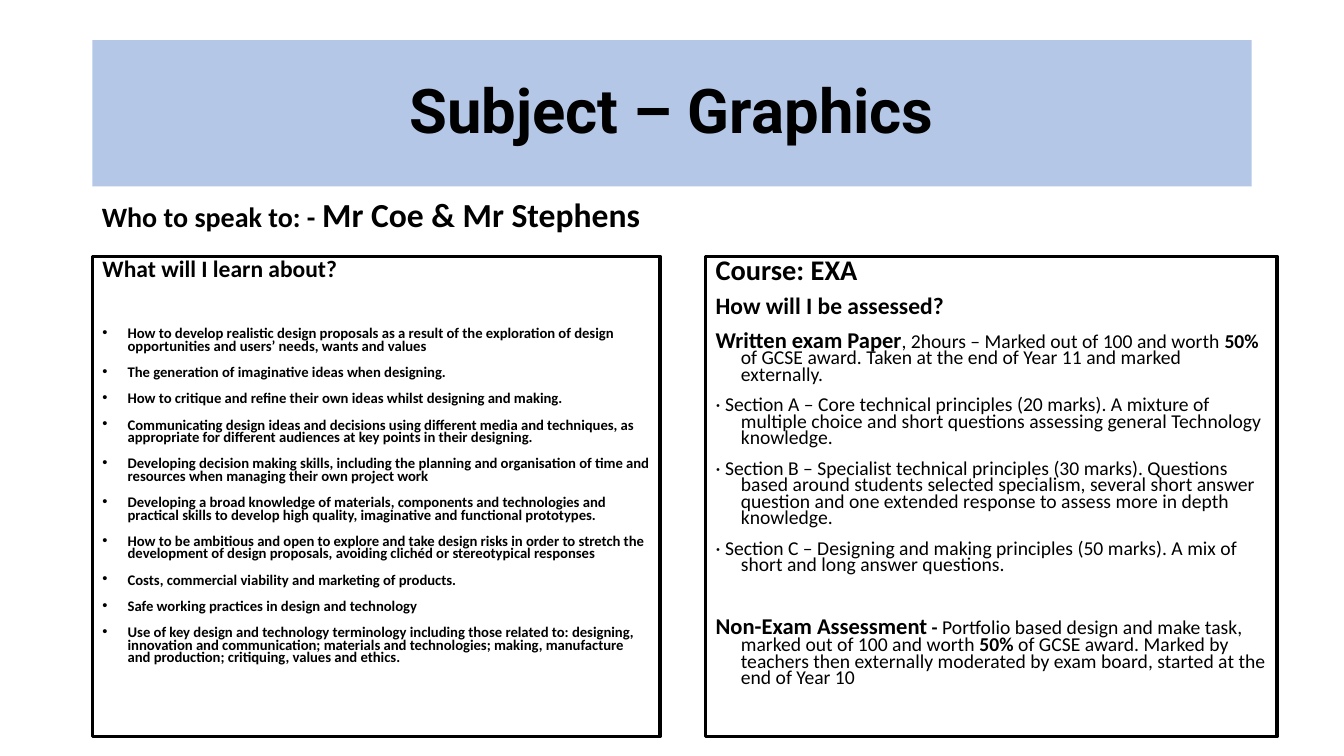
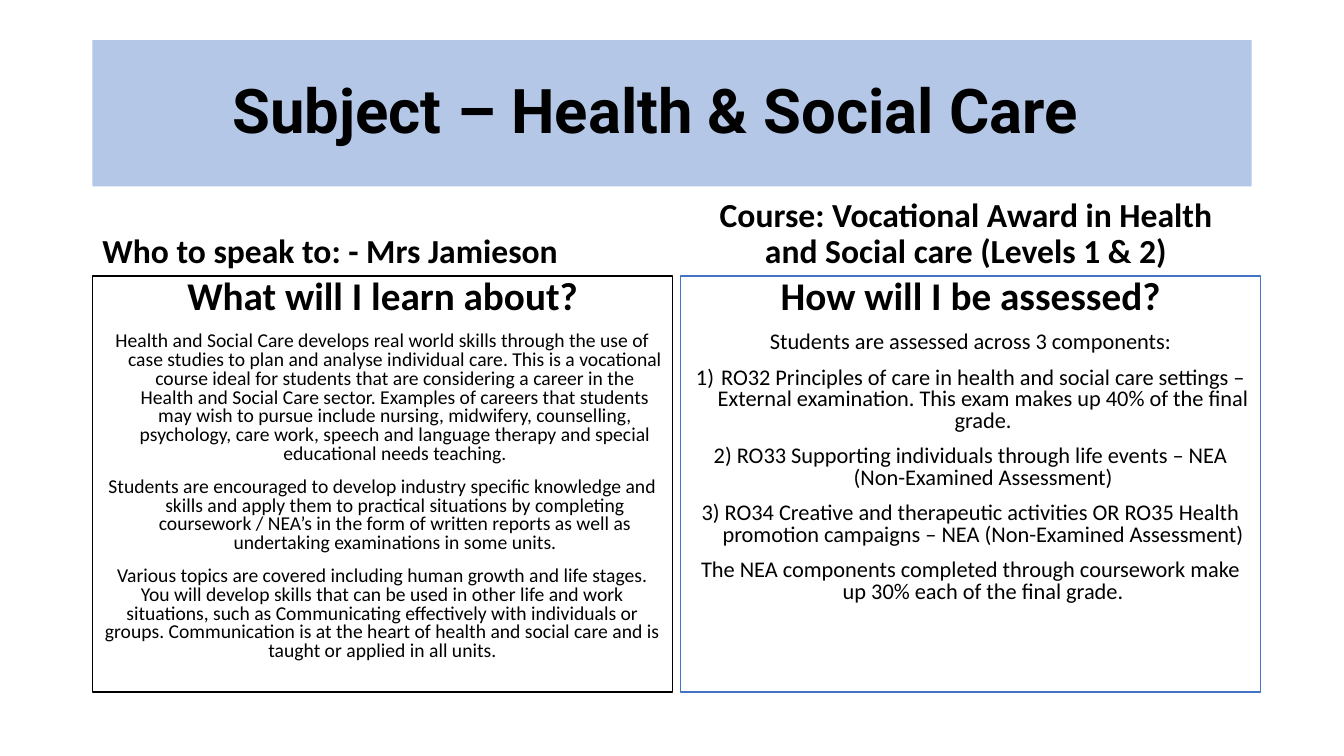
import dataclasses
import typing

import lxml.etree
import pptx
import pptx.dml.color
import pptx.enum.text
import pptx.oxml.ns
import pptx.util

Pt = pptx.util.Pt
Align = pptx.enum.text.PP_ALIGN
Anchor = pptx.enum.text.MSO_ANCHOR

BLACK = "000000"
WHITE = "FFFFFF"
BAND = "B4C7E7"
BLUE = "4472C4"
BODY = "Calibri"
HEAD = "Roboto"
LEFT = 66
HANG = 18
GAP = 10


@dataclasses.dataclass
class Run:
    text: str
    size: float
    bold: bool = False


@dataclasses.dataclass
class Para:
    runs: list[Run]
    hang: float = 0
    mark: str = ""
    gap: float = GAP


@dataclasses.dataclass
class Box:
    slot: int
    area: tuple[float, float, float, float]
    paras: list[Para]
    lead: float = 0.9
    align: Align = Align.LEFT
    anchor: Anchor = Anchor.TOP
    font: str = BODY
    fill: str = ""
    line: str = ""
    width: float = 1
    right: float = 7.2


def color(code: str) -> pptx.dml.color.RGBColor:
    return pptx.dml.color.RGBColor.from_string(code)


def text(words: str, size: float, bold: bool = False, **rest: typing.Any) -> Para:
    return Para([Run(words, size, bold)], **rest)


def title(words: str, right: float = 7.2) -> Box:
    return Box(0, (LEFT, 28.7, 828, 104.5), [text(words, 44, True)], align=Align.CENTER,
               anchor=Anchor.MIDDLE, font=HEAD, fill=BAND, right=right)


def set_mark(para: typing.Any, part: Para) -> None:
    props = para._p.get_or_add_pPr()
    props.set("marL", str(Pt(part.hang)))
    props.set("indent", str(-Pt(part.hang)))
    name = pptx.oxml.ns.qn
    if not part.mark:
        lxml.etree.SubElement(props, name("a:buNone"))
    elif part.mark == "1)":
        lxml.etree.SubElement(props, name("a:buAutoNum"), type="arabicParenR")
    else:
        lxml.etree.SubElement(props, name("a:buChar"), char=part.mark)


def set_font(font: typing.Any, run: Run) -> None:
    font.size = Pt(run.size)
    font.bold = run.bold


def draw_para(para: typing.Any, part: Para, box: Box, first: bool) -> None:
    para.alignment = box.align
    para.line_spacing = box.lead
    para.space_before = Pt(0 if first else part.gap)
    set_mark(para, part)
    para.font.name = box.font
    para.font.color.rgb = color(BLACK)
    if len(part.runs) == 1:
        set_font(para.font, part.runs[0])
    for run in part.runs:
        piece = para.add_run()
        piece.text = run.text
        if len(part.runs) > 1:
            set_font(piece.font, run)


def draw_box(slide: typing.Any, box: Box) -> None:
    shape = next(p for p in slide.placeholders if p.placeholder_format.idx == box.slot)
    shape.left, shape.top, shape.width, shape.height = map(Pt, box.area)
    if box.fill:
        shape.fill.solid()
        shape.fill.fore_color.rgb = color(box.fill)
    if box.line:
        shape.line.color.rgb = color(box.line)
        shape.line.width = Pt(box.width)
    frame = shape.text_frame
    frame.word_wrap = True
    frame.auto_size = pptx.enum.text.MSO_AUTO_SIZE.NONE
    frame.vertical_anchor = box.anchor
    frame.margin_right = Pt(box.right)
    for spot, part in enumerate(box.paras):
        para = frame.add_paragraph() if spot else frame.paragraphs[0]
        draw_para(para, part, box, spot == 0)


def draw_slide(deck: typing.Any, boxes: list[Box]) -> None:
    slide = deck.slides.add_slide(deck.slide_layouts[4])
    for box in boxes:
        draw_box(slide, box)
    used = {box.slot for box in boxes}
    for shape in list(slide.placeholders):
        if shape.placeholder_format.idx not in used:
            shape.element.getparent().remove(shape.element)


GOALS = [
    "How to develop realistic design proposals as a result of the exploration of design "
    "opportunities and users’ needs, wants and values",
    "The generation of imaginative ideas when designing.",
    "How to critique and refine their own ideas whilst designing and making.",
    "Communicating design ideas and decisions using different media and techniques, as "
    "appropriate for different audiences at key points in their designing.",
    "Developing decision making skills, including the planning and organisation of time and "
    "resources when managing their own project work",
    "Developing a broad knowledge of materials, components and technologies and practical "
    "skills to develop high quality, imaginative and functional prototypes.",
    "How to be ambitious and open to explore and take design risks in order to stretch the "
    "development of design proposals, avoiding clichéd or stereotypical responses",
    "Costs, commercial viability and marketing of products.",
    "Safe working practices in design and technology",
    "Use of key design and technology terminology including those related to: designing, "
    "innovation and communication; materials and technologies; making, manufacture and "
    "production; critiquing, values and ethics.",
]

PARTS = [
    "· Section A – Core technical principles (20 marks). A mixture of multiple choice and "
    "short questions assessing general Technology knowledge.",
    "· Section B – Specialist technical principles (30 marks). Questions based around "
    "students selected specialism, several short answer question and one extended response "
    "to assess more in depth knowledge.",
    "· Section C – Designing and making principles (50 marks). A mix of short and long "
    "answer questions.",
]

EXAM = Para([
    Run("Written exam Paper", 16.1, True),
    Run(", 2hours – Marked out of 100 and worth ", 14),
    Run("50%", 14, True),
    Run(" of GCSE award. Taken at the end of Year 11 and marked externally.", 14),
], HANG)

TASK = Para([
    Run("Non-Exam Assessment", 16.1, True),
    Run(" - ", 14, True),
    Run("Portfolio based design and make task, marked out of 100 and worth ", 14),
    Run("50% ", 14, True),
    Run("of GCSE award. Marked by teachers then externally moderated by exam board, "
        "started at the end of Year 10", 14),
], HANG, gap=32)

ART = [
    title("Subject – Graphics"),
    Box(1, (65.5, 106.5, 406, 64.8),
        [Para([Run("Who to speak to: - ", 20, True), Run("Mr Coe & Mr Stephens", 24, True)])],
        anchor=Anchor.BOTTOM),
    Box(2, (LEFT, 183, 405.5, 343.2),
        [text("What will I learn about?", 16.8, True)]
        + [text(goal, 10.5, True, hang=HANG, mark="•", gap=GAP if spot else 34.3)
           for spot, goal in enumerate(GOALS)],
        lead=0.7, line=BLACK, width=2.25),
    Box(4, (504, 183, 408.2, 343.2),
        [text("Course: EXA", 20.3, True), text("How will I be assessed?", 16.8, True), EXAM]
        + [text(part, 14, hang=HANG) for part in PARTS] + [TASK],
        lead=0.7, line=BLACK, width=2.25),
]

ABOUT = [
    "Health and Social Care develops real world skills through the use of case studies to "
    "plan and analyse individual care. This is a vocational course ideal for students that "
    "are considering a career in the Health and Social Care sector. Examples of careers that "
    "students may wish to pursue include nursing, midwifery, counselling, psychology, care "
    "work, speech and language therapy and special educational needs teaching.",
    "Students are encouraged to develop industry specific knowledge and skills and apply them "
    "to practical situations by completing coursework / NEA’s in the form of written reports "
    "as well as undertaking examinations in some units.",
]

TOPICS = (
    "Various topics are covered including human growth and life stages. You will develop "
    "skills that can be used in other life and work situations, such as Communicating "
    "effectively with individuals or groups. Communication is at the heart of health and "
    "social care and is taught or applied in all units."
)

UNITS = [
    ("", "Students are assessed across 3 components:"),
    ("1)", "RO32 Principles of care in health and social care settings – External "
     "examination. This exam makes up 40% of the final grade."),
    ("", "2) RO33 Supporting individuals through life events – NEA (Non-Examined Assessment)"),
    ("", "3) RO34 Creative and therapeutic activities OR RO35 Health promotion campaigns – "
     "NEA (Non-Examined Assessment)"),
    ("", "The NEA components completed through coursework make up 30% each of the final grade."),
]

CARE = [
    title("Subject – Health & Social Care", right=30),
    Box(1, (LEFT, 132.5, 406, 64.8), [text("Who to speak to: - Mrs Jamieson", 24, True)],
        anchor=Anchor.BOTTOM),
    Box(2, (LEFT, 197, 414.5, 297.4),
        [text("What will I learn about?", 28, True)]
        + [text(words, 14, hang=HANG) for words in ABOUT] + [text(TOPICS, 14)],
        lead=0.8, align=Align.CENTER, fill=WHITE, line=BLACK),
    Box(3, (486, 132.5, 408, 64.8),
        [text("Course: Vocational Award in Health and Social care (Levels 1 & 2)", 24, True)],
        align=Align.CENTER, anchor=Anchor.BOTTOM),
    Box(4, (486, 197, 414.5, 297.4),
        [text("How will I be assessed?", 28, True)]
        + [text(words, 16, hang=HANG, mark=mark) for mark, words in UNITS],
        lead=0.8, align=Align.CENTER, fill=WHITE, line=BLUE),
]


def main() -> None:
    deck = pptx.Presentation()
    deck.slide_width, deck.slide_height = Pt(960), Pt(540)
    for boxes in (ART, CARE):
        draw_slide(deck, boxes)
    deck.save("out.pptx")


if __name__ == "__main__":
    main()
